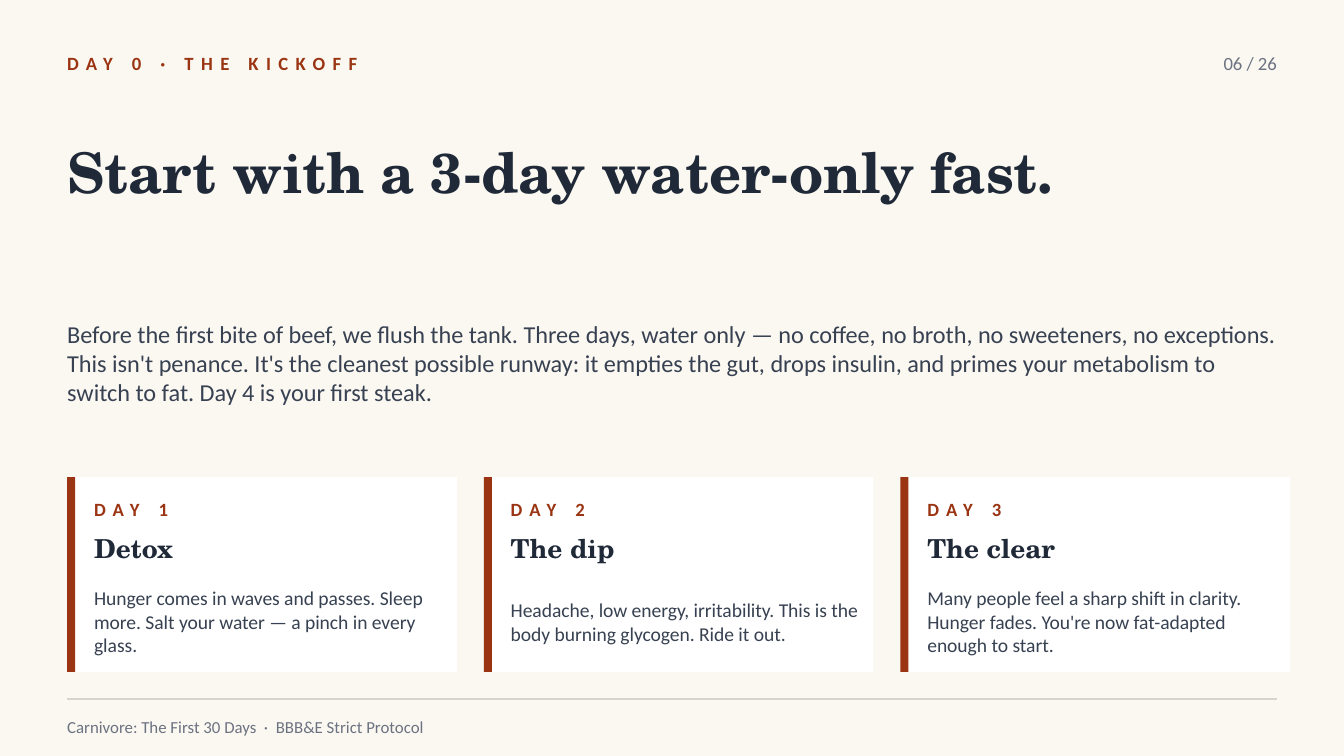
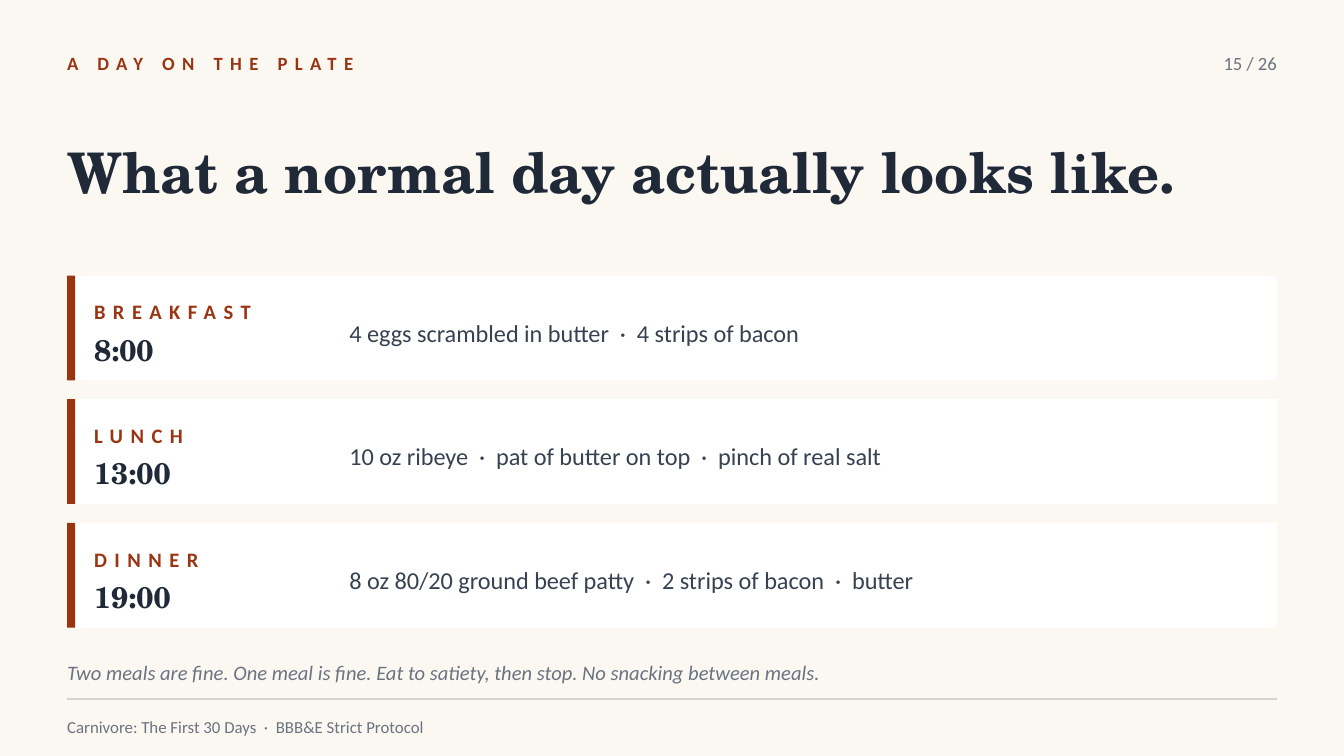
import pptx
import pptx.dml.color
import pptx.enum.shapes
import pptx.enum.text
import pptx.oxml.ns
import pptx.util
from lxml import etree

PX = 9144  # EMU; 100 px make an inch
SLIDE_WIDTH = 1000
MARGIN = 50
CONTENT_WIDTH = SLIDE_WIDTH - 2 * MARGIN
TEXT_INDENT = 20

COLORS = {
    "paper": "FBF8F2",
    "card": "FFFFFF",
    "accent": "9A3412",
    "ink": "1F2937",
    "body": "374151",
    "muted": "6B7280",
    "rule": "D6D3D1",
}
SANS, SERIF = "Calibri", "TeX Gyre Schola"
SEPARATOR = "  ·  "
FOOTER = SEPARATOR.join(["Carnivore: The First 30 Days", "BBB&E Strict Protocol"])
PAGE_COUNT = 26

FAST_DAYS = [
    ("DAY 1", "Detox",
     "Hunger comes in waves and passes. Sleep more. "
     "Salt your water — a pinch in every glass."),
    ("DAY 2", "The dip",
     "Headache, low energy, irritability. "
     "This is the body burning glycogen. Ride it out."),
    ("DAY 3", "The clear",
     "Many people feel a sharp shift in clarity. "
     "Hunger fades. You're now fat-adapted enough to start."),
]
MEALS = [
    ("BREAKFAST", "8:00", ["4 eggs scrambled in butter", "4 strips of bacon"]),
    ("LUNCH", "13:00", ["10 oz ribeye", "pat of butter on top", "pinch of real salt"]),
    ("DINNER", "19:00", ["8 oz 80/20 ground beef patty", "2 strips of bacon", "butter"]),
]


def rgb(color):
    return pptx.dml.color.RGBColor.from_string(COLORS[color])


class Deck:
    """Holds the presentation, its style and the slide being built."""

    def __init__(self):
        self.presentation = pptx.Presentation()
        self.presentation.slide_width = SLIDE_WIDTH * PX
        self.presentation.slide_height = SLIDE_WIDTH * PX * 9 // 16
        self.slide = None

    def start_slide(self, topic, page, title):
        self.slide = self.presentation.slides.add_slide(
            self.presentation.slide_layouts[6])
        background = self.slide.background.fill
        background.solid()
        background.fore_color.rgb = rgb("paper")
        self.label(topic, MARGIN, 32, 600, 30)
        self.text(f"{page:02} / {PAGE_COUNT}", 850, 32, 100, 30, size=10,
                  color="muted", align=pptx.enum.text.PP_ALIGN.RIGHT)
        self.heading(title, MARGIN, 75, CONTENT_WIDTH, 105, size=30)

    def text(self, words, left, top, width, height, size, color="body", font=SANS,
             bold=False, italic=False, spacing=0,
             align=pptx.enum.text.PP_ALIGN.LEFT):
        """Add one line or wrapped paragraph; spacing is letter spacing in points."""
        box = self.slide.shapes.add_textbox(left * PX, top * PX, width * PX, height * PX)
        frame = box.text_frame
        frame.word_wrap = True
        frame.vertical_anchor = pptx.enum.text.MSO_ANCHOR.MIDDLE
        frame.margin_left = frame.margin_right = 0
        frame.margin_top = frame.margin_bottom = 0
        paragraph = frame.paragraphs[0]
        paragraph.alignment = align
        run = paragraph.add_run()
        run.text = words
        run.font.name = font
        run.font.size = pptx.util.Pt(size)
        run.font.bold = bold
        run.font.italic = italic
        run.font.color.rgb = rgb(color)
        if spacing:
            run._r.get_or_add_rPr().set("spc", str(spacing * 100))

    def label(self, words, left, top, width, height, size=10):
        self.text(words, left, top, width, height, size, "accent", bold=True, spacing=4)

    def heading(self, words, left, top, width, height, size):
        self.text(words, left, top, width, height, size, "ink", SERIF, bold=True)

    def rectangle(self, left, top, width, height, color):
        shape = self.slide.shapes.add_shape(
            pptx.enum.shapes.MSO_SHAPE.RECTANGLE,
            left * PX, top * PX, width * PX, height * PX)
        shape.shadow.inherit = False
        shape.fill.solid()
        shape.fill.fore_color.rgb = rgb(color)
        shape.line.fill.background()

    def card(self, left, top, width, height):
        """Add a white panel with an accent bar on its left edge."""
        self.rectangle(left, top, width, height, "card")
        self.rectangle(left, top, 6, height, "accent")

    def footer(self):
        top = 520
        rule = self.slide.shapes.add_connector(
            pptx.enum.shapes.MSO_CONNECTOR.STRAIGHT,
            MARGIN * PX, top * PX, (MARGIN + CONTENT_WIDTH) * PX, top * PX)
        rule.line.color.rgb = rgb("rule")
        rule.line.width = pptx.util.Pt(0.75)
        etree.SubElement(rule._element.spPr, pptx.oxml.ns.qn("a:effectLst"))
        self.text(FOOTER, MARGIN, top + 8, CONTENT_WIDTH, 25, size=9, color="muted")


def build_kickoff(deck):
    deck.start_slide("DAY 0 · THE KICKOFF", 6, "Start with a 3-day water-only fast.")
    deck.text(
        "Before the first bite of beef, we flush the tank. Three days, water only — "
        "no coffee, no broth, no sweeteners, no exceptions. This isn't penance. "
        "It's the cleanest possible runway: it empties the gut, drops insulin, and "
        "primes your metabolism to switch to fat. Day 4 is your first steak.",
        MARGIN, 200, CONTENT_WIDTH, 140, size=13)
    top, width, gap = 355, 290, 20
    for column, (day, phase, advice) in enumerate(FAST_DAYS):
        left = MARGIN + column * (width + gap)
        text_left = left + TEXT_INDENT
        deck.card(left, top, width, 145)
        deck.label(day, text_left, top + 10, 200, 28)
        deck.heading(phase, text_left, top + 38, 265, 30, size=14)
        deck.text(advice, text_left, top + 70, 265, 75, size=10.5)
    deck.footer()


def build_daily_plate(deck):
    deck.start_slide("A DAY ON THE PLATE", 15, "What a normal day actually looks like.")
    height, gap = 78, 14
    text_left = MARGIN + TEXT_INDENT
    for row, (meal, time, foods) in enumerate(MEALS):
        top = 205 + row * (height + gap)
        deck.card(MARGIN, top, CONTENT_WIDTH, height)
        deck.label(meal, text_left, top + 12, 180, 30, size=11)
        deck.heading(time, text_left, top + 40, 180, 30, size=16)
        deck.text(SEPARATOR.join(foods), 260, top + 20, 670, 45, size=13)
    deck.text(
        "Two meals are fine. One meal is fine. Eat to satiety, then stop. "
        "No snacking between meals.",
        MARGIN, 485, CONTENT_WIDTH, 30, size=11, color="muted", italic=True)
    deck.footer()


def main():
    deck = Deck()
    build_kickoff(deck)
    build_daily_plate(deck)
    deck.presentation.save("out.pptx")


if __name__ == "__main__":
    main()
